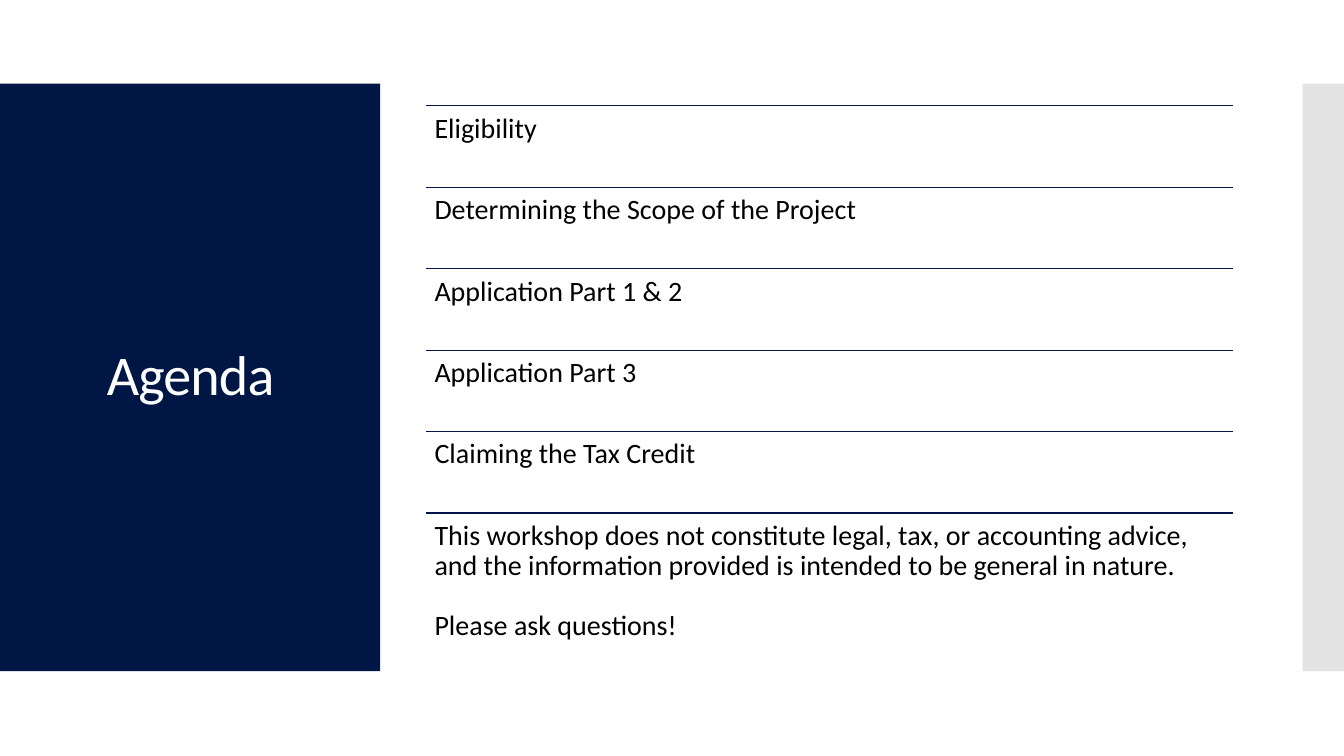
from dataclasses import dataclass

import pptx
import pptx.dml.color
import pptx.enum.shapes
import pptx.enum.text
import pptx.oxml
import pptx.oxml.ns
import pptx.util

Inches = pptx.util.Inches
Pt = pptx.util.Pt
Align = pptx.enum.text.PP_ALIGN
Anchor = pptx.enum.text.MSO_ANCHOR

NAVY, GREY, WHITE, BLACK = "001746", "C8C8C8", "FFFFFF", "000000"
LIST_LEFT, LIST_WIDTH = 4.23, 8.0
FIRST_RULE, LAST_RULE = 1.05, 5.09
ITEM_HEIGHT, NOTICE_HEIGHT = 0.81, 1.56
BLANK_LINE = 21.5


@dataclass
class Band:
    left: float
    width: float
    colour: str
    opacity: int = 100


@dataclass
class TextStyle:
    size: float
    colour: str
    align: Align
    anchor: Anchor
    inset: float
    spacing: int = 0
    gap: float = 0


BANDS = [Band(0, 3.77, NAVY), Band(12.92, 0.41, GREY, 50)]
TITLE = TextStyle(40, WHITE, Align.CENTER, Anchor.MIDDLE, 0.1, spacing=-60)
ITEM = TextStyle(20, BLACK, Align.LEFT, Anchor.TOP, 0.08, gap=BLANK_LINE)
AGENDA = [
    ["Eligibility"],
    ["Determining the Scope of the Project"],
    ["Application Part 1 & 2"],
    ["Application Part 3"],
    ["Claiming the Tax Credit"],
    [
        "This workshop does not constitute legal, tax, or accounting advice, "
        "and the information provided is intended to be general in nature.",
        "Please ask questions!",
    ],
]


def rgb(colour: str) -> pptx.dml.color.RGBColor:
    return pptx.dml.color.RGBColor.from_string(colour)


def add_band(slide, band: Band) -> None:
    panel = slide.shapes.add_shape(
        pptx.enum.shapes.MSO_SHAPE.RECTANGLE,
        Inches(band.left), Inches(0.83), Inches(band.width), Inches(5.83),
    )
    panel.shadow.inherit = False
    panel.line.fill.background()
    panel.fill.solid()
    panel.fill.fore_color.rgb = rgb(band.colour)
    if band.opacity < 100:
        fill_colour = panel.fill._xPr.find(".//" + pptx.oxml.ns.qn("a:srgbClr"))
        alpha = pptx.oxml.parse_xml(f"<a:alpha {pptx.oxml.ns.nsdecls('a')}/>")
        alpha.set("val", str(band.opacity * 1000))
        fill_colour.append(alpha)


def add_rule(slide, top: float) -> None:
    """Draw the thin line above an agenda item."""
    rule = slide.shapes.add_connector(
        pptx.enum.shapes.MSO_CONNECTOR.STRAIGHT,
        Inches(LIST_LEFT), Inches(top), Inches(LIST_LEFT + LIST_WIDTH), Inches(top),
    )
    rule.line.color.rgb = rgb(NAVY)
    rule.line.width = Pt(0.85)
    no_effects = pptx.oxml.parse_xml(f"<a:effectLst {pptx.oxml.ns.nsdecls('a')}/>")
    rule._element.spPr.append(no_effects)


def add_text(slide, left: float, top: float, width: float, height: float,
             lines: list[str], style: TextStyle) -> None:
    box = slide.shapes.add_textbox(Inches(left), Inches(top), Inches(width), Inches(height))
    frame = box.text_frame
    inset = Inches(style.inset)
    frame_format = {
        "word_wrap": True, "vertical_anchor": style.anchor,
        "margin_left": inset, "margin_right": inset,
        "margin_top": inset, "margin_bottom": inset,
    }
    for name, value in frame_format.items():
        setattr(frame, name, value)
    frame.text = "\n".join(lines)
    font_format = {"name": "Calibri", "size": Pt(style.size)}
    for index, paragraph in enumerate(frame.paragraphs):
        paragraph.alignment = style.align
        paragraph.line_spacing = 0.9
        if index:
            paragraph.space_before = Pt(style.gap)
        run = paragraph.runs[0]
        for name, value in font_format.items():
            setattr(run.font, name, value)
        run.font.color.rgb = rgb(style.colour)
        if style.spacing:
            run._r.get_or_add_rPr().set("spc", str(style.spacing))


def main() -> None:
    deck = pptx.Presentation()
    deck.slide_width, deck.slide_height = Inches(13.33), Inches(7.5)
    slide = deck.slides.add_slide(deck.slide_layouts[6])

    for band in BANDS:
        add_band(slide, band)
    add_text(slide, 0.28, 1.23, 3.22, 5.03, ["Agenda"], TITLE)

    pitch = (LAST_RULE - FIRST_RULE) / (len(AGENDA) - 1)
    for row, lines in enumerate(AGENDA):
        top = FIRST_RULE + row * pitch
        height = ITEM_HEIGHT if len(lines) == 1 else NOTICE_HEIGHT
        add_rule(slide, top)
        add_text(slide, LIST_LEFT, top, LIST_WIDTH, height, lines, ITEM)

    deck.save("out.pptx")


if __name__ == "__main__":
    main()
